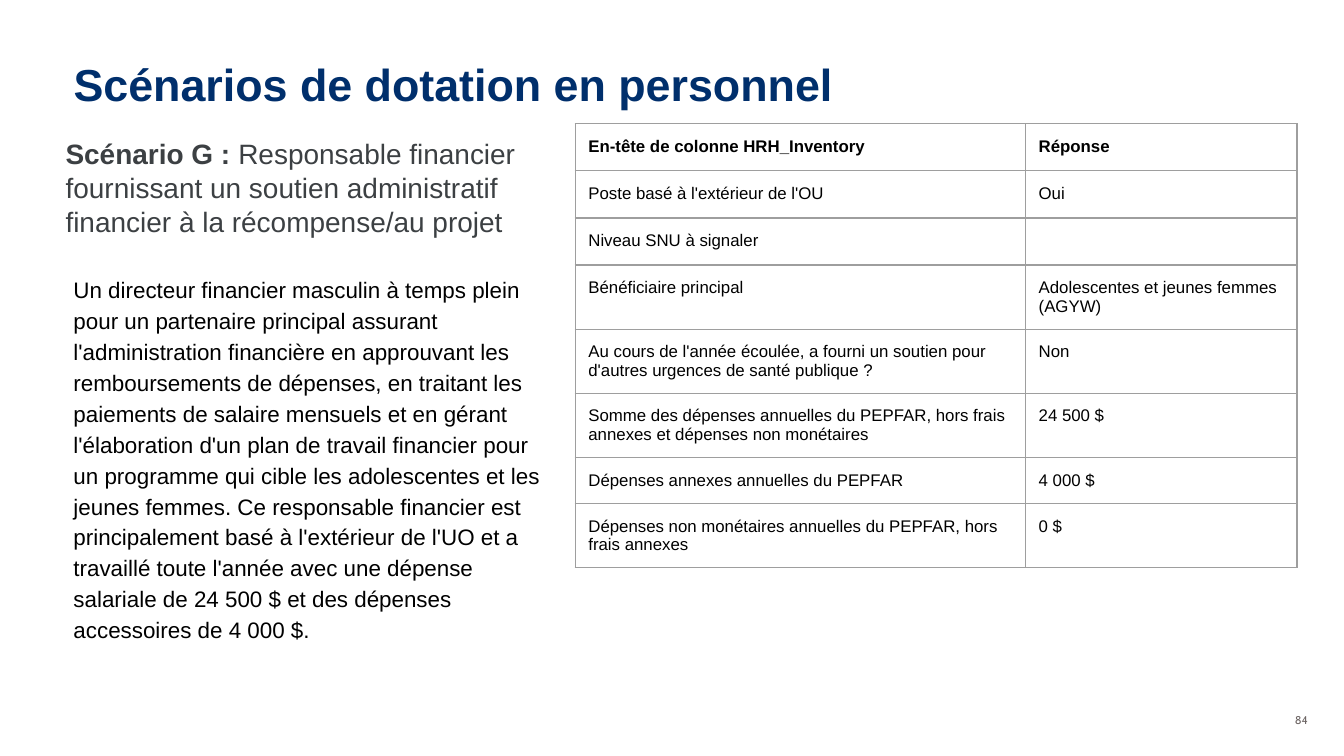
"""Build the staffing scenario G slide: a description beside its inventory table."""
from dataclasses import dataclass

from lxml.etree import SubElement
from pptx import Presentation
from pptx.dml.color import RGBColor as RGB
from pptx.enum.text import MSO_ANCHOR as Anchor, MSO_AUTO_SIZE as AutoSize, PP_ALIGN as Align
from pptx.oxml.ns import qn
from pptx.util import Cm, Pt


@dataclass(frozen=True)
class Style:
    size: float
    color: str
    font: str = "Arial"


THEME = {
    "title": Style(24, "002F6C"),
    "scenario": Style(15, "3C4043"),
    "story": Style(12, "000000"),
    "cell": Style(9, "000000"),
    "number": Style(6, "6C6463", "Cabin"),
}
BORDER_COLOR, BORDER_WIDTH = "9E9E9E", Pt(0.75)
INSET = 0.25

TITLE = "Scénarios de dotation en personnel"
SCENARIO = [
    ("Scénario G : ", True),
    ("Responsable financier fournissant un soutien administratif financier "
     "à la récompense/au projet", False),
]
STORY = (
    "Un directeur financier masculin à temps plein pour un partenaire principal assurant "
    "l'administration financière en approuvant les remboursements de dépenses, en traitant "
    "les paiements de salaire mensuels et en gérant l'élaboration d'un plan de travail "
    "financier pour un programme qui cible les adolescentes et les jeunes femmes. Ce "
    "responsable financier est principalement basé à l'extérieur de l'UO et a travaillé "
    "toute l'année avec une dépense salariale de 24 500 $ et des dépenses accessoires "
    "de 4 000 $."
)
ROWS = [
    ("En-tête de colonne HRH_Inventory", "Réponse", 0.89),
    ("Poste basé à l'extérieur de l'OU", "Oui", 0.89),
    ("Niveau SNU à signaler", "", 0.89),
    ("Bénéficiaire principal", "Adolescentes et jeunes femmes (AGYW)", 1.21),
    ("Au cours de l'année écoulée, a fourni un soutien pour d'autres urgences de santé "
     "publique ?", "Non", 1.21),
    ("Somme des dépenses annuelles du PEPFAR, hors frais annexes et dépenses non "
     "monétaires", "24 500 $", 1.21),
    ("Dépenses annexes annuelles du PEPFAR", "4 000 $", 0.87),
    ("Dépenses non monétaires annuelles du PEPFAR, hors frais annexes", "0 $", 1.21),
]
COLUMNS = (8.51, 5.13)
NUMBER = "84"

TITLE_BOX = (1.14, 1.07, 21.59, 1.27)
SCENARIO_BOX = (0.99, 2.34, 10.06, 2.44)
STORY_BOX = (1.14, 4.9, 9.42, 8.46)
NUMBER_BOX = (19.05, 13.36, 5.92, 0.51)
TABLE_AT = (10.87, 2.34)


def write(p, runs, style):
    for text, bold in runs:
        r = p.add_run()
        r.text = text
        r.font.name, r.font.size, r.font.bold = style.font, Pt(style.size), bold
        r.font.color.rgb = RGB.from_string(style.color)


def setup_frame(tf, anchor, inset_y=INSET):
    tf.word_wrap, tf.auto_size, tf.vertical_anchor = True, AutoSize.NONE, anchor
    tf.margin_left = tf.margin_right = Cm(INSET)
    tf.margin_top = tf.margin_bottom = Cm(inset_y)
    return tf.paragraphs[0]


def add_text(slide, box, runs, style, anchor=Anchor.TOP, inset_y=INSET):
    sp = slide.shapes.add_textbox(*map(Cm, box))
    p = setup_frame(sp.text_frame, anchor, inset_y)
    write(p, runs, style)
    return p


def outline(cell):
    tc_pr = cell._tc.get_or_add_tcPr()
    for i, side in enumerate(("lnL", "lnR", "lnT", "lnB")):
        ln = tc_pr.makeelement(qn(f"a:{side}"), {"w": str(BORDER_WIDTH)})
        fill = SubElement(ln, qn("a:solidFill"))
        SubElement(fill, qn("a:srgbClr"), val=BORDER_COLOR)
        tc_pr.insert(i, ln)


def fill_cell(cell, text, bold):
    cell.fill.background()
    cell.margin_left = cell.margin_right = cell.margin_top = cell.margin_bottom = Cm(INSET)
    outline(cell)
    p = cell.text_frame.paragraphs[0]
    if text:
        write(p, [(text, bold)], THEME["cell"])
    else:
        SubElement(p._p, qn("a:endParaRPr"), sz=str(THEME["cell"].size * 100))


def add_inventory(slide):
    height = sum(row[-1] for row in ROWS)
    size = (sum(COLUMNS), height)
    frame = slide.shapes.add_table(len(ROWS), len(COLUMNS), *map(Cm, TABLE_AT + size))
    table = frame.table
    table.first_row = table.horz_banding = False
    for column, width in zip(table.columns, COLUMNS):
        column.width = Cm(width)
    for i, (*texts, row_height) in enumerate(ROWS):
        table.rows[i].height = Cm(row_height)
        for j, text in enumerate(texts):
            fill_cell(table.cell(i, j), text, i == 0)


def main():
    prs = Presentation()
    prs.slide_width, prs.slide_height = Cm(25.4), Cm(14.29)
    slide = prs.slides.add_slide(prs.slide_layouts[5])

    title = slide.shapes.title
    title.left, title.top, title.width, title.height = map(Cm, TITLE_BOX)
    p = setup_frame(title.text_frame, Anchor.BOTTOM)
    p.alignment = Align.LEFT
    write(p, [(TITLE, True)], THEME["title"])

    add_inventory(slide)
    p = add_text(slide, NUMBER_BOX, [(NUMBER, False)], THEME["number"], Anchor.MIDDLE, 0.13)
    p.alignment = Align.RIGHT
    add_text(slide, SCENARIO_BOX, SCENARIO, THEME["scenario"])
    p = add_text(slide, STORY_BOX, [(STORY, False)], THEME["story"])
    p.line_spacing = 1.15
    p.space_before = p.space_after = Pt(12)

    prs.save("out.pptx")


if __name__ == "__main__":
    main()
